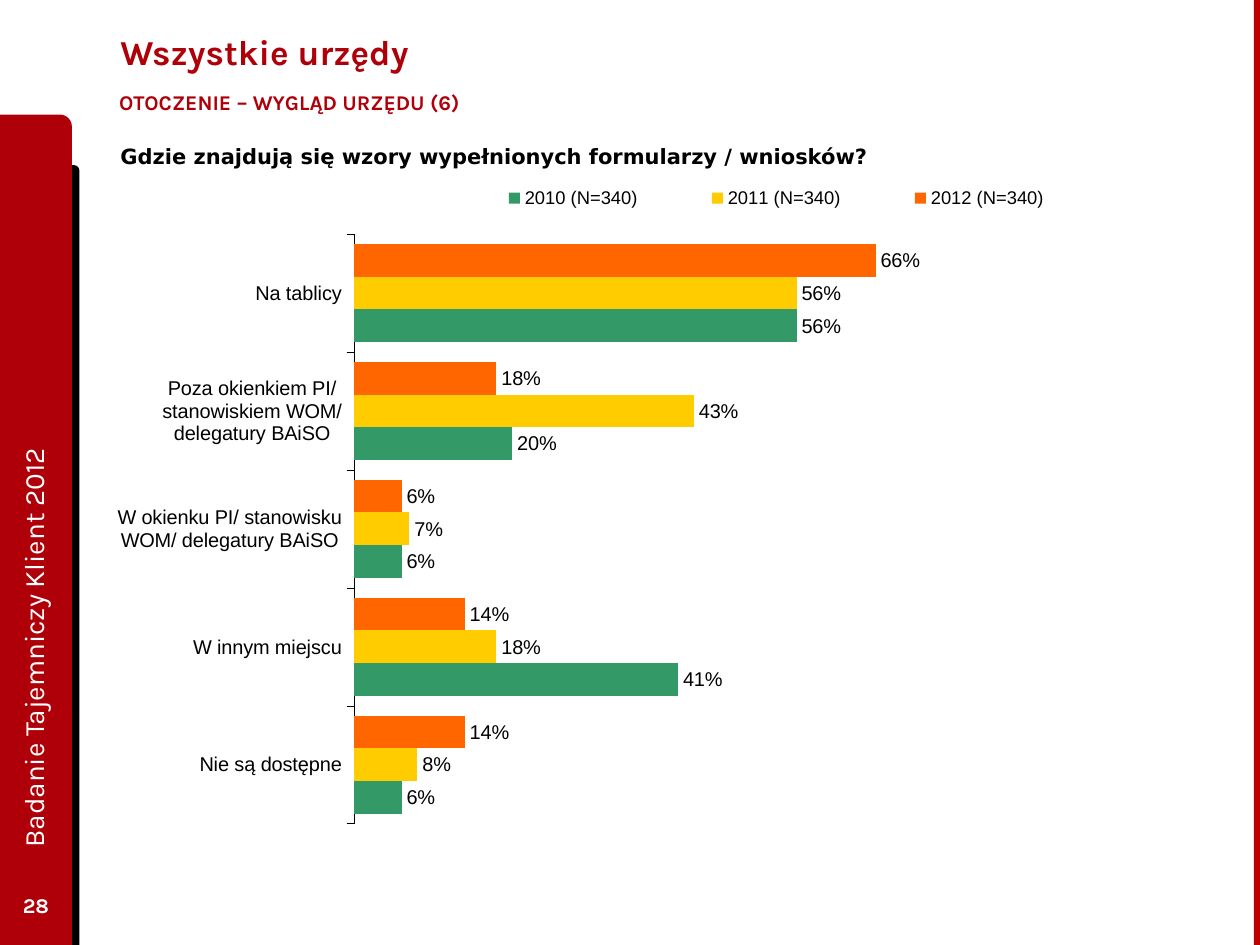
"""Build the slide on where sample forms are found in the offices."""
import pptx
import pptx.chart.data
import pptx.dml.color
import pptx.enum.chart
import pptx.enum.shapes
import pptx.enum.text
import pptx.oxml
import pptx.oxml.ns
import pptx.util

Cm = pptx.util.Cm
Pt = pptx.util.Pt
Align = pptx.enum.text.PP_ALIGN
Anchor = pptx.enum.text.MSO_ANCHOR
Shape = pptx.enum.shapes.MSO_SHAPE
Kind = pptx.enum.chart


def color(code):
    return pptx.dml.color.RGBColor.from_string(code)


def layout(x, y, w, h, inner=False):
    target = '<c:layoutTarget val="inner"/>' if inner else ""
    modes = '<c:xMode val="edge"/><c:yMode val="edge"/>'
    sizes = "".join(f'<c:{k} val="{v}"/>' for k, v in zip("xywh", (x, y, w, h)))
    space = pptx.oxml.ns.nsdecls("c")
    return pptx.oxml.parse_xml(
        f"<c:layout {space}><c:manualLayout>{target}{modes}{sizes}</c:manualLayout></c:layout>")


class Deck:
    red = "AF000A"
    black = "000000"
    white = "FFFFFF"
    face = "Karla"
    plain = "Arial"

    def __init__(self):
        self.file = pptx.Presentation()
        self.file.slide_width, self.file.slide_height = Cm(25.4), Cm(19.05)
        self.slide = self.file.slides.add_slide(self.file.slide_layouts[6])

    def style(self, font, size, code, face, bold=False):
        font.size, font.name, font.bold = Pt(size), face, bold
        font.color.rgb = color(code)

    def block(self, kind, box, code):
        shape = self.slide.shapes.add_shape(kind, *map(Cm, box))
        shape.shadow.inherit = False
        shape.fill.solid()
        shape.fill.fore_color.rgb = color(code)
        shape.line.fill.background()

    def text(self, words, box, size, code, face=face, bold=True, wrap=True,
             anchor=Anchor.MIDDLE, align=Align.LEFT, turn=0, side=0.25):
        shape = self.slide.shapes.add_textbox(*map(Cm, box))
        shape.rotation = turn
        frame = shape.text_frame
        frame.text = words
        frame.word_wrap, frame.vertical_anchor = wrap, anchor
        frame.margin_left = frame.margin_right = Cm(side)
        line = frame.paragraphs[0]
        line.alignment = align
        self.style(line.runs[0].font, size, code, face, bold)

    def chart(self, box, names, rows):
        data = pptx.chart.data.CategoryChartData(number_format="0%")
        data.categories = names
        for name, _, values in rows:
            data.add_series(name, values)
        chart = self.slide.shapes.add_chart(
            Kind.XL_CHART_TYPE.BAR_CLUSTERED, *map(Cm, box), data).chart
        chart.has_title = False
        self.style(chart.font, 11.4, self.black, self.plain)
        self.axes(chart)
        self.legend(chart)
        plot = chart.plots[0]
        plot.gap_width, plot.overlap, plot.vary_by_categories = 60, 0, False
        for bars, (_, code, _) in zip(plot.series, rows):
            bars.format.fill.solid()
            bars.format.fill.fore_color.rgb = color(code)
            labels = bars.data_labels
            labels.show_value = True
            labels.number_format, labels.number_format_is_linked = "0%", False
            labels.position = Kind.XL_LABEL_POSITION.OUTSIDE_END
            self.style(labels.font, 11.4, self.black, self.plain)

    def axes(self, chart):
        area = chart.plots[0]._element.getparent()
        for old in area.findall(pptx.oxml.ns.qn("c:layout")):
            area.remove(old)
        area.insert(0, layout(0.22, 0.1, 0.73, 0.9, inner=True))
        side, scale = chart.category_axis, chart.value_axis
        side.reverse_order = True
        side.major_tick_mark = Kind.XL_TICK_MARK.OUTSIDE
        side.format.line.color.rgb = color(self.black)
        side.format.line.width = Pt(0.25)
        self.style(side.tick_labels.font, 11.4, self.black, self.plain)
        scale.minimum_scale, scale.maximum_scale, scale.major_unit = 0, 1, 0.2
        scale.has_major_gridlines = scale.visible = False

    def legend(self, chart):
        chart.has_legend = True
        key = chart.legend
        key.position = Kind.XL_LEGEND_POSITION.TOP
        key.include_in_layout = False
        self.style(key.font, 10.5, self.black, self.plain)
        for old in key._element.findall(pptx.oxml.ns.qn("c:layout")):
            key._element.remove(old)
        place = key._element.find(pptx.oxml.ns.qn("c:legendPos"))
        place.addnext(layout(0.3, 0.02, 0.62, 0.05))


def main():
    deck = Deck()
    deck.block(Shape.ROUND_1_RECTANGLE, (0.99, 3.33, 0.61, 15.72), deck.black)
    deck.block(Shape.ROUND_1_RECTANGLE, (0, 2.31, 1.45, 16.74), deck.red)
    deck.block(Shape.RECTANGLE, (25.28, 0, 0.12, 19.05), "BD0000")
    deck.text("Wszystkie urzędy", (2.18, 0.13, 19.74, 1.83), 20, deck.red)
    deck.text("Badanie Tajemniczy Klient 2012", (-6.65, 9.37, 14.63, 1.3), 16,
              deck.white, bold=False, turn=270)
    deck.text("OTOCZENIE – WYGLĄD URZĘDU (6)", (1.9, 1.68, 9.78, 0.84), 12,
              deck.red, wrap=False, anchor=Anchor.TOP, side=0.5)
    deck.chart(
        (2.34, 3.4, 21.82, 13.21),
        ("Na tablicy", "Poza okienkiem PI/ stanowiskiem WOM/ delegatury BAiSO",
         "W okienku PI/ stanowisku WOM/ delegatury BAiSO", "W innym miejscu",
         "Nie są dostępne"),
        (("2012 (N=340)", "FF6600", (0.66, 0.18, 0.06, 0.14, 0.14)),
         ("2011 (N=340)", "FFCC00", (0.56, 0.43, 0.07, 0.18, 0.08)),
         ("2010 (N=340)", "339966", (0.56, 0.2, 0.06, 0.41, 0.06))))
    deck.text("Gdzie znajdują się wzory wypełnionych formularzy / wniosków?",
              (2.18, 2.77, 16.43, 0.76), 12, deck.black, face="DejaVu Sans",
              anchor=Anchor.TOP)
    deck.text("28", (0, 17.73, 1.45, 1.02), 12, deck.white, align=Align.CENTER)
    deck.file.save("out.pptx")


if __name__ == "__main__":
    main()
